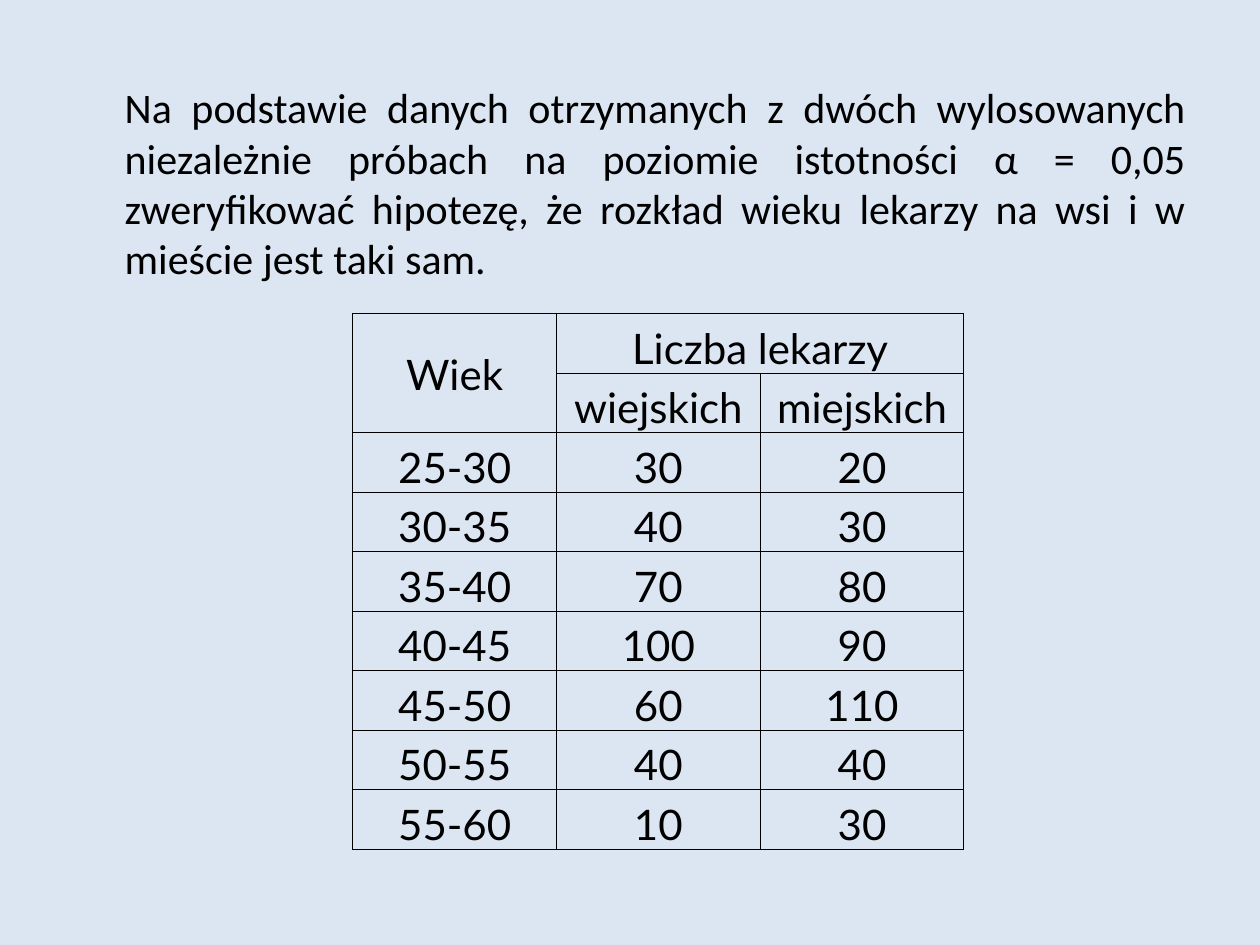
from pptx import Presentation
from pptx.dml.color import RGBColor
from pptx.enum.text import MSO_ANCHOR, PP_ALIGN
from pptx.oxml.ns import qn
from pptx.util import Inches, Pt
from lxml.etree import SubElement

COLORS = {"background": "DCE6F2", "ink": "000000"}
INK = RGBColor.from_string(COLORS["ink"])


def set_font(p, name):
    p.font.name, p.font.size = name, Pt(24)
    p.font.color.rgb = INK


def add_borders(cell):
    tcPr = cell._tc.get_or_add_tcPr()
    for i, side in enumerate(("lnL", "lnR", "lnT", "lnB")):
        ln = tcPr.makeelement(qn(f"a:{side}"), {"w": str(Pt(0.5))})
        fill = SubElement(ln, qn("a:solidFill"))
        SubElement(fill, qn("a:srgbClr"), val=COLORS["ink"])
        tcPr.insert(i, ln)


prs = Presentation()
prs.slide_width, prs.slide_height = Inches(10), Inches(7.5)
s = prs.slides.add_slide(prs.slide_layouts[6])
s.background.fill.solid()
s.background.fill.fore_color.rgb = RGBColor.from_string(COLORS["background"])

# Task statement
tf = s.shapes.add_textbox(Inches(0.51), Inches(0.6), Inches(9), Inches(2)).text_frame
tf.word_wrap = True
tf.margin_left = Inches(0.48)
p = tf.paragraphs[0]
p.text = ("Na podstawie danych otrzymanych z dwóch wylosowanych niezależnie próbach "
          "na poziomie istotności α = 0,05 zweryfikować hipotezę, że rozkład wieku "
          "lekarzy na wsi i w mieście jest taki sam.")
p.alignment = PP_ALIGN.JUSTIFY
set_font(p, "Calibri")
before = SubElement(p._p.get_or_add_pPr(), qn("a:spcBef"))
SubElement(before, qn("a:spcPct"), val="20000")
p._p.pPr.insert(0, before)

# Age distribution table
rows = [
    ("Wiek", "Liczba lekarzy", ""),
    ("", "wiejskich", "miejskich"),
    ("25-30", "30", "20"),
    ("30-35", "40", "30"),
    ("35-40", "70", "80"),
    ("40-45", "100", "90"),
    ("45-50", "60", "110"),
    ("50-55", "40", "40"),
    ("55-60", "10", "30"),
]
table = s.shapes.add_table(len(rows), 3, Inches(2.8), Inches(2.49),
                           Inches(4.85), Inches(4.25)).table
table.first_row = table.horz_banding = False
for r, values in enumerate(rows):
    for c, value in enumerate(values):
        cell = table.cell(r, c)
        cell.fill.background()
        add_borders(cell)
        cell.margin_left = cell.margin_right = cell.margin_top = Inches(0.01)
        cell.margin_bottom = 0
        cell.vertical_anchor = MSO_ANCHOR.BOTTOM
        p = cell.text_frame.paragraphs[0]
        p.text = value
        p.alignment = PP_ALIGN.CENTER
        set_font(p, "Lato")

# Merged headings
table.cell(0, 0).merge(table.cell(1, 0))
table.cell(0, 0).vertical_anchor = MSO_ANCHOR.MIDDLE
table.cell(0, 1).merge(table.cell(0, 2))

prs.save("out.pptx")
